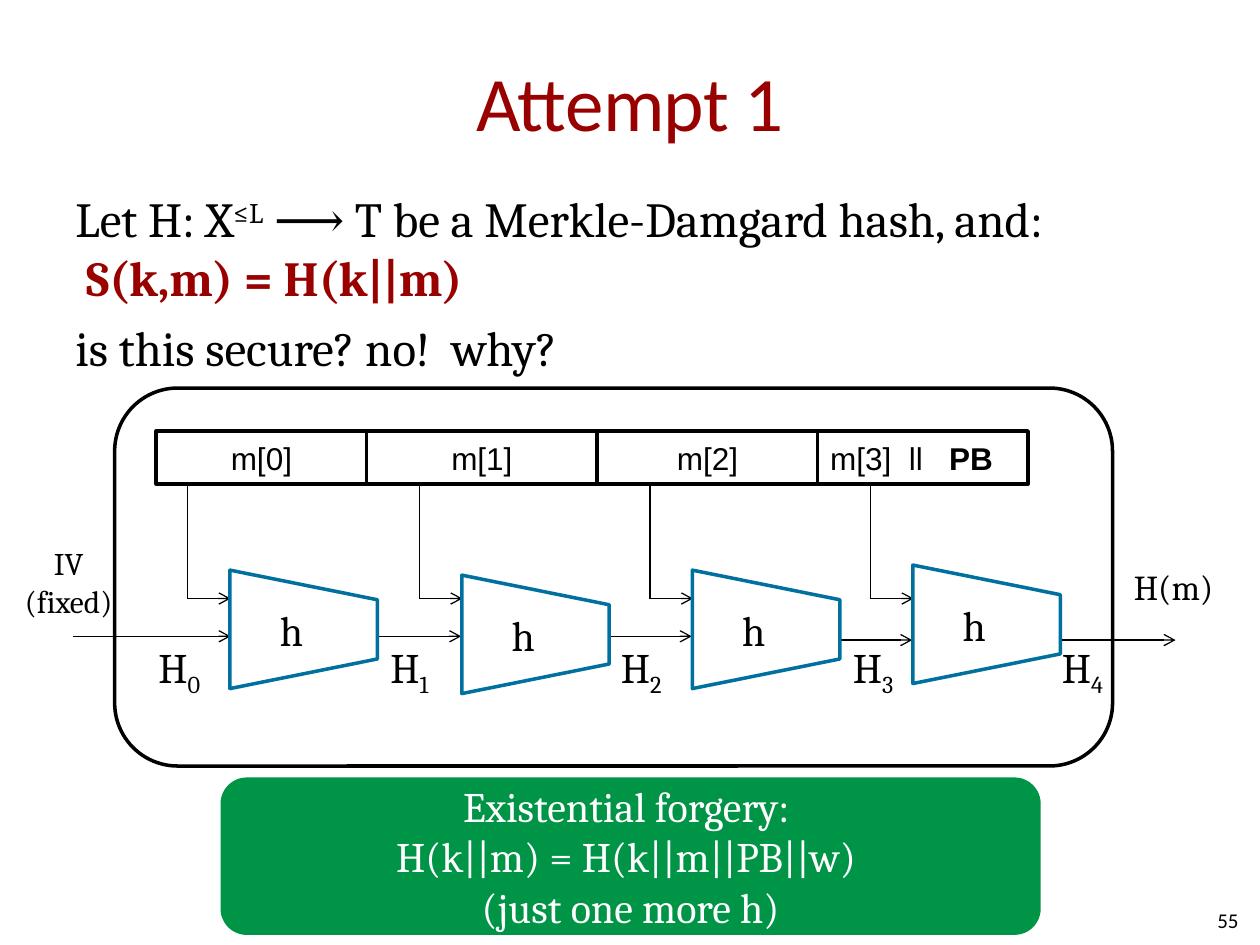
from dataclasses import dataclass
from typing import NamedTuple, Optional

from lxml.etree import SubElement
from pptx import Presentation
from pptx.dml.color import RGBColor
from pptx.enum.shapes import MSO_CONNECTOR, MSO_SHAPE
from pptx.enum.text import MSO_ANCHOR, MSO_AUTO_SIZE, PP_ALIGN
from pptx.oxml.ns import qn
from pptx.util import Inches, Pt

BLACK = RGBColor(0x00, 0x00, 0x00)
WHITE = RGBColor(0xFF, 0xFF, 0xFF)
RED = RGBColor(0x99, 0x00, 0x00)
BLUE = RGBColor(0x00, 0x70, 0x9E)
GREEN = RGBColor(0x00, 0x94, 0x46)

BLOCK_TOP, BLOCK_HEIGHT = 3.42, 0.42
DROP_BOTTOM = 4.75


class Box(NamedTuple):
    left: float
    top: float
    width: float
    height: float


class Style(NamedTuple):
    font: str
    size: float
    color: RGBColor = BLACK
    align: PP_ALIGN = PP_ALIGN.LEFT


@dataclass
class Stage:
    block: str
    block_width: float
    drop: float
    h_top: float


@dataclass
class Link:
    start: float
    end: float
    y: float


STAGES = [
    Stage("m[0]", 1.67, 1.49, 4.41),
    Stage("m[1]", 1.83, 3.33, 4.45),
    Stage("m[2]", 1.75, 5.16, 4.41),
    Stage("m[3]  ll   ", 1.67, 6.91, 4.37),
]
LINKS = [
    Link(0.58, 1.83, 5.05),
    Link(2.83, 3.66, 5.05),
    Link(4.66, 5.49, 5.05),
    Link(6.49, 7.24, 5.08),
    Link(8.24, 9.33, 5.08),
]
STATE_LEFTS = [1.16, 3, 4.83, 6.67, 8.33]

BODY = Style("Cambria", 28)
STATE = Style("Cambria", 24)
H_STYLE = Style("Cambria", 24, align=PP_ALIGN.CENTER)
BLOCK = Style("Arial", 18, align=PP_ALIGN.CENTER)


def format_run(r, style: Style, bold: bool = False, baseline: int = 0) -> None:
    r.font.name = style.font
    r.font.size = Pt(style.size)
    r.font.color.rgb = style.color
    r.font.bold = bold
    if baseline:
        r.font._element.set("baseline", str(baseline * 1000))


def add_run(p, text: str, style: Style, bold: bool = False, baseline: int = 0) -> None:
    r = p.add_run()
    r.text = text
    format_run(r, style, bold, baseline)


def write(tf, text: str, style: Style) -> None:
    tf.text = text
    for p in tf.paragraphs:
        p.alignment = style.align
        for r in p.runs:
            format_run(r, style)


def set_margins(tf, x: float, y: float) -> None:
    tf.margin_left = tf.margin_right = Inches(x)
    tf.margin_top = tf.margin_bottom = Inches(y)


def add_text(s, box: Box, text: str, style: Style, wrap: bool = True):
    tf = s.shapes.add_textbox(*map(Inches, box)).text_frame
    tf.word_wrap = wrap
    if not wrap:
        tf.auto_size = MSO_AUTO_SIZE.SHAPE_TO_FIT_TEXT
    write(tf, text, style)
    return tf


def add_shape(s, kind: MSO_SHAPE, box: Box, fill: RGBColor, line: Optional[RGBColor]):
    sp = s.shapes.add_shape(kind, *map(Inches, box))
    sp.shadow.inherit = False
    sp.fill.solid()
    sp.fill.fore_color.rgb = fill
    if line is None:
        sp.line.fill.background()
    else:
        sp.line.color.rgb = line
        sp.line.width = Pt(2)
    sp.text_frame.vertical_anchor = MSO_ANCHOR.MIDDLE
    return sp


def add_line(s, x1: float, y1: float, x2: float, y2: float, arrow: bool = True) -> None:
    line = s.shapes.add_connector(MSO_CONNECTOR.STRAIGHT, *map(Inches, (x1, y1, x2, y2)))
    line.line.color.rgb = BLACK
    line.line.width = Pt(0.75)
    if arrow:
        SubElement(line.line._get_or_add_ln(), qn("a:tailEnd"), type="arrow")
    SubElement(line._element.spPr, qn("a:effectLst"))


def add_header(s) -> None:
    tf = add_text(s, Box(0.5, 0.17, 9, 1.25), "Attempt 1",
                  Style("Calibri", 44, RED, PP_ALIGN.CENTER))
    tf.vertical_anchor = MSO_ANCHOR.MIDDLE
    set_margins(tf, 0, 0.05)
    tf.paragraphs[0].runs[0].font._element.set("spc", "-50")

    tf = add_text(s, Box(7.5, 7.1, 2.33, 0.4), "55",
                  Style("Calibri", 12, align=PP_ALIGN.RIGHT))
    tf.vertical_anchor = MSO_ANCHOR.MIDDLE
    set_margins(tf, 0, 0)


def add_body(s) -> None:
    tf = add_text(s, Box(0.5, 1.45, 8.92, 1.88),
                  "Let H: X\nis this secure? no!  why?", BODY)
    for p in tf.paragraphs:
        p.space_before = Pt(6.5)
    p = tf.paragraphs[0]
    add_run(p, "≤L", BODY, baseline=30)
    add_run(p, " ⟶ T be a Merkle-Damgard hash, and:", BODY)
    p.add_line_break()
    add_run(p, " ", BODY)
    add_run(p, "S(k,m) = H(k||m)", BODY._replace(color=RED), bold=True)


def add_blocks(s) -> None:
    left = 1.24
    for stage in STAGES:
        box = Box(left, BLOCK_TOP, stage.block_width, BLOCK_HEIGHT)
        tf = add_shape(s, MSO_SHAPE.RECTANGLE, box, WHITE, BLACK).text_frame
        tf.word_wrap = False
        write(tf, stage.block, BLOCK)
        left += stage.block_width
    p = tf.paragraphs[0]
    p.alignment = PP_ALIGN.LEFT
    add_run(p, "PB", BLOCK, bold=True)


def add_chain(s) -> None:
    for stage in STAGES:
        add_line(s, stage.drop, BLOCK_TOP + BLOCK_HEIGHT, stage.drop, DROP_BOTTOM, arrow=False)
        add_line(s, stage.drop, DROP_BOTTOM, stage.drop + 0.34, DROP_BOTTOM)
    for link in LINKS:
        add_line(s, link.start, link.y, link.end, link.y)
    for i, left in enumerate(STATE_LEFTS):
        tf = add_text(s, Box(left, 5.04, 0.56, 0.5), "H", STATE, wrap=False)
        add_run(tf.paragraphs[0], str(i), STATE, baseline=-25)
    for stage in STAGES:
        box = Box(stage.drop + 0.45, stage.h_top, 0.94, 1.17)
        sp = add_shape(s, MSO_SHAPE.TRAPEZOID, box, WHITE, BLUE)
        sp.rotation = 90
        set_margins(sp.text_frame, 0, 0)
        write(sp.text_frame, "h", H_STYLE)
        sp.text_frame._txBody.bodyPr.set("vert", "vert270")


def main() -> None:
    prs = Presentation()
    prs.slide_width, prs.slide_height = Inches(10), Inches(7.5)
    s = prs.slides.add_slide(prs.slide_layouts[6])
    add_header(s)
    add_body(s)
    add_shape(s, MSO_SHAPE.ROUNDED_RECTANGLE, Box(0.91, 3.08, 7.92, 3), WHITE, BLACK)
    add_blocks(s)
    add_text(s, Box(0.08, 4.27, 0.93, 0.71), "IV\n(fixed)",
             Style("Cambria", 18, align=PP_ALIGN.CENTER), wrap=False)
    add_text(s, Box(8.9, 4.44, 0.84, 0.44), "H(m)", Style("Cambria", 20), wrap=False)
    add_chain(s)
    sp = add_shape(s, MSO_SHAPE.ROUNDED_RECTANGLE, Box(1.75, 6.17, 6.51, 1.25), GREEN, None)
    set_margins(sp.text_frame, 0, 0)
    write(sp.text_frame, "Existential forgery: \vH(k||m) = H(k||m||PB||w) \v(just one more h)",
          H_STYLE._replace(color=WHITE))
    prs.save("out.pptx")


if __name__ == "__main__":
    main()
